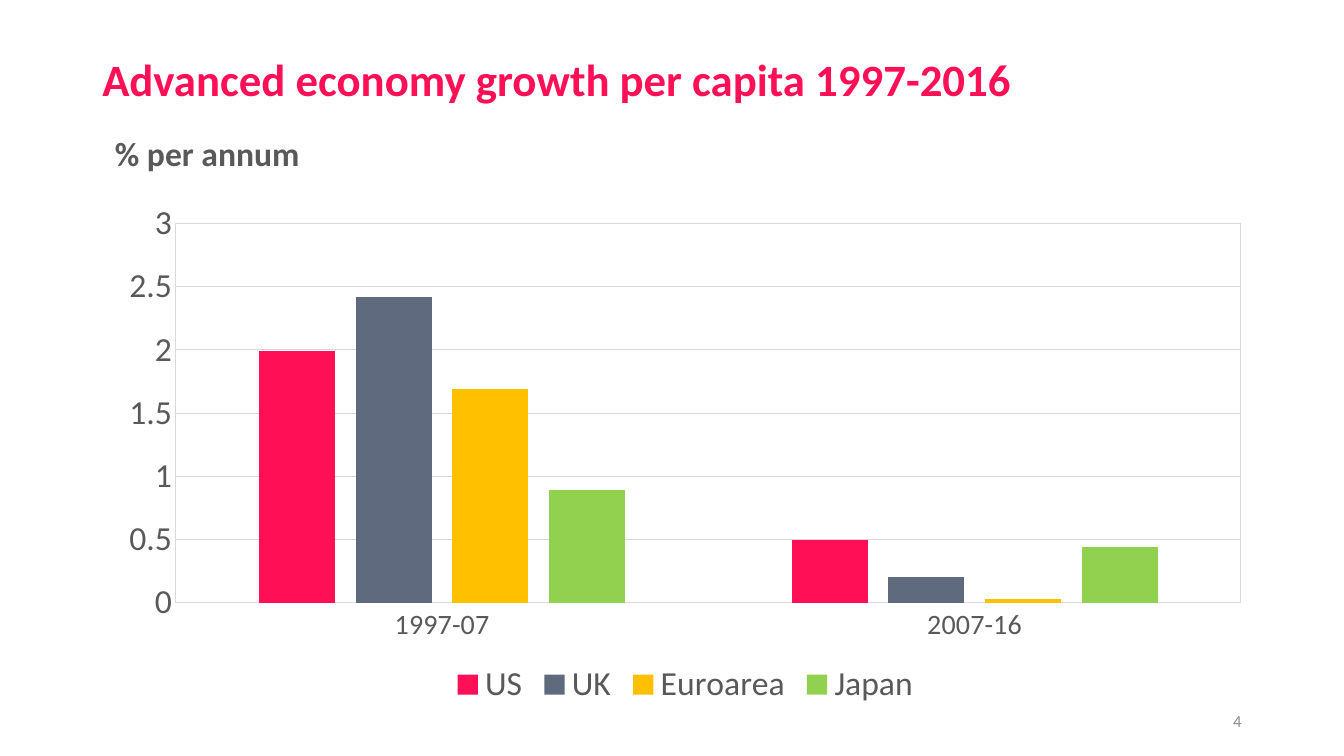
from lxml import etree
from pptx import Presentation
from pptx.chart.data import CategoryChartData
from pptx.dml.color import RGBColor
from pptx.enum.chart import XL_CHART_TYPE, XL_LEGEND_POSITION, XL_TICK_MARK
from pptx.enum.text import MSO_ANCHOR, PP_ALIGN
from pptx.oxml import parse_xml
from pptx.oxml.ns import nsdecls, qn
from pptx.util import Pt

COLUMNS = XL_CHART_TYPE.COLUMN_CLUSTERED
BOTTOM = XL_LEGEND_POSITION.BOTTOM
NO_TICK = XL_TICK_MARK.NONE
TOP, MIDDLE = MSO_ANCHOR.TOP, MSO_ANCHOR.MIDDLE
LEFT, RIGHT = PP_ALIGN.LEFT, PP_ALIGN.RIGHT

FONT = "Calibri"
COLORS = {
    "title": "FF0F55", "text": "595959", "number": "8C8C8C", "grid": "D9D9D9",
    "US": "FF0F55", "UK": "5F6A7E", "Euroarea": "FFC000", "Japan": "92D050",
}
PERIODS = ["1997-07", "2007-16"]
GROWTH = {
    "US": (1.99, 0.5),
    "UK": (2.42, 0.2),
    "Euroarea": (1.69, 0.03),
    "Japan": (0.89, 0.44),
}
PLOT_BOX = {"x": 0.06, "y": 0.06, "w": 0.92, "h": 0.73}


def rgb(name):
    return RGBColor.from_string(COLORS[name])


def style_font(font, size, color, bold=False):
    font.name, font.size, font.bold = FONT, Pt(size), bold
    font.color.rgb = rgb(color)


def add_text(slide, box, text, size, color, bold=False, anchor=TOP,
             align=LEFT, wrap=True):
    tf = slide.shapes.add_textbox(*map(Pt, box)).text_frame
    tf.word_wrap = wrap
    tf.vertical_anchor = anchor
    p = tf.paragraphs[0]
    p.text, p.alignment = text, align
    style_font(p.font, size, color, bold)
    return p


def frame_plot(chart):
    """Fix the inner plot area within the chart and outline it."""
    plot_area = chart.plots[0]._element.getparent()
    for old in plot_area.findall(qn("c:layout")):
        plot_area.remove(old)
    layout = etree.Element(qn("c:layout"))
    manual = etree.SubElement(layout, qn("c:manualLayout"))
    settings = {"layoutTarget": "inner", "xMode": "edge", "yMode": "edge", **PLOT_BOX}
    for tag, value in settings.items():
        etree.SubElement(manual, qn(f"c:{tag}")).set("val", str(value))
    plot_area.insert(0, layout)
    plot_area.append(parse_xml(
        f'<c:spPr {nsdecls("c", "a")}><a:noFill/><a:ln w="9525"><a:solidFill>'
        f'<a:srgbClr val="{COLORS["grid"]}"/></a:solidFill></a:ln></c:spPr>'))


def style_line(line):
    line.color.rgb = rgb("grid")
    line.width = Pt(0.75)


def add_growth_chart(slide, box):
    data = CategoryChartData(number_format="General")
    data.categories = PERIODS
    for economy, rates in GROWTH.items():
        data.add_series(economy, rates)
    chart = slide.shapes.add_chart(COLUMNS, *map(Pt, box), data).chart
    chart.has_title = False
    style_font(chart.font, 24, "text")

    plot = chart.plots[0]
    plot.gap_width, plot.overlap, plot.vary_by_categories = 219, -27, False
    for series in plot.series:
        series.format.fill.solid()
        series.format.fill.fore_color.rgb = rgb(series.name)

    for axis, size in ((chart.category_axis, 20), (chart.value_axis, 24)):
        axis.major_tick_mark = axis.minor_tick_mark = NO_TICK
        style_font(axis.tick_labels.font, size, "text")
    style_line(chart.category_axis.format.line)
    values = chart.value_axis
    values.minimum_scale, values.maximum_scale, values.major_unit = 0, 3, 0.5
    values.format.line.fill.background()
    style_line(values.major_gridlines.format.line)

    chart.has_legend = True
    chart.legend.position = BOTTOM
    chart.legend.include_in_layout = False
    style_font(chart.legend.font, 24, "text")
    frame_plot(chart)


def add_chart_slide(prs):
    slide = prs.slides.add_slide(prs.slide_layouts[6])
    title = add_text(slide, (66, 38, 828, 78),
                     "Advanced economy growth per capita 1997-2016", 32, "title", True)
    title.line_spacing = 0.9
    add_growth_chart(slide, (76, 137.5, 827, 371))
    add_text(slide, (75, 91.5, 153, 36), "% per annum", 24, "text", True, wrap=False)
    add_text(slide, (678, 500.5, 216, 29), "4", 12, "number",
             anchor=MIDDLE, align=RIGHT)


def main():
    prs = Presentation()
    prs.slide_width, prs.slide_height = Pt(960), Pt(540)
    add_chart_slide(prs)
    prs.save("out.pptx")


if __name__ == "__main__":
    main()
